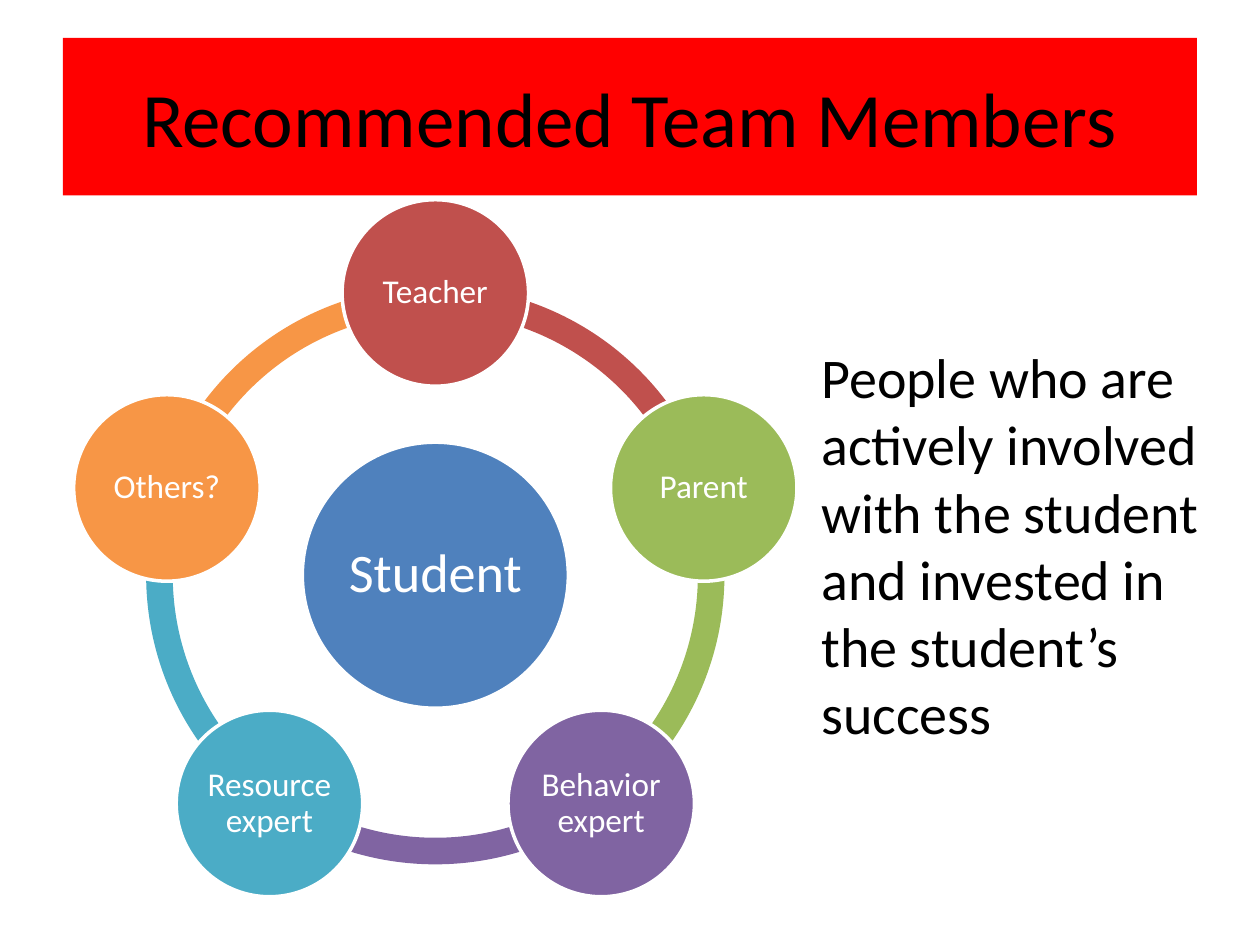
import math

import pptx
import pptx.util
import pptx.dml.color
import pptx.enum.shapes
import pptx.enum.text

# Slide grid: 100 columns by 75 rows of square cells
COLS, ROWS = 100, 75
CELL = pptx.util.Inches(0.1)
FONT = "Calibri"
COLORS = {
    "banner": "FF0000", "text": "000000", "white": "FFFFFF", "blue": "4F81BD",
    "red": "C0504D", "green": "9BBB59", "purple": "8064A2",
    "teal": "4BACC6", "orange": "F79646",
}
MEMBERS = [
    ("Teacher", "red"), ("Parent", "green"), ("Behavior expert", "purple"),
    ("Resource expert", "teal"), ("Others?", "orange"),
]
SHAPE = pptx.enum.shapes.MSO_SHAPE
ALIGN = pptx.enum.text.PP_ALIGN
ANCHOR = pptx.enum.text.MSO_ANCHOR


def rgb(name):
    return pptx.dml.color.RGBColor.from_string(COLORS[name])


def cells(*lengths):
    return [round(n * CELL) for n in lengths]


def add_text(s, text, size, color="white", align=ALIGN.CENTER,
             anchor=ANCHOR.MIDDLE, inset=None, spacing=None):
    tf = s.text_frame
    tf.word_wrap = True
    tf.vertical_anchor = anchor
    if inset is not None:
        tf.margin_left = tf.margin_right = pptx.util.Inches(inset)
        tf.margin_top = tf.margin_bottom = pptx.util.Inches(inset)
    p = tf.paragraphs[0]
    p.alignment = align
    p.line_spacing = spacing
    r = p.add_run()
    r.text = text
    r.font.name = FONT
    r.font.size = pptx.util.Pt(size)
    r.font.color.rgb = rgb(color)


def add_filled(slide, kind, box, fill, outlined=False):
    s = slide.shapes.add_shape(kind, *cells(*box))
    s.shadow.inherit = False
    s.fill.solid()
    s.fill.fore_color.rgb = rgb(fill)
    if outlined:
        s.line.color.rgb = rgb("white")
        s.line.width = pptx.util.Pt(2)
    else:
        s.line.fill.background()
    return s


def add_circle(slide, cx, cy, d, fill, text, size):
    s = add_filled(slide, SHAPE.OVAL, (cx - d / 2, cy - d / 2, d, d), fill, True)
    add_text(s, text, size, inset=0.02, spacing=0.9)


def add_title(slide, box):
    s = add_filled(slide, SHAPE.RECTANGLE, box, "banner")
    add_text(s, "Recommended Team Members", 44, color="text")


def add_cycle(slide, box):
    left, top, width, height = box
    cx, cy = left + width / 2, top + height / 2
    step = 360 / len(MEMBERS)
    angles = [270 + i * step for i in range(len(MEMBERS))]

    # Ring segments, each running clockwise from its member to the next
    for angle, (_, color) in reversed(list(zip(angles, MEMBERS))):
        s = add_filled(slide, SHAPE.BLOCK_ARC, box, color)
        s.adjustments[0] = angle % 360 * 0.6
        s.adjustments[1] = (angle + step) % 360 * 0.6
        s.adjustments[2] = 0.046

    # Hub and members
    add_circle(slide, cx, cy, width * 0.46, "blue", "Student", 31)
    orbit = width * 0.488
    for angle, (name, color) in zip(angles, MEMBERS):
        a = math.radians(angle)
        add_circle(slide, cx + orbit * math.cos(a), cy + orbit * math.sin(a),
                   14.8, color, name, 19)


def add_caption(slide, box):
    s = slide.shapes.add_textbox(*cells(*box))
    add_text(s, "People who are actively involved with the student "
             "and invested in the student’s success", 32,
             color="text", align=ALIGN.LEFT, anchor=ANCHOR.TOP)


def main():
    prs = pptx.Presentation()
    prs.slide_width, prs.slide_height = cells(COLS, ROWS)
    slide = prs.slides.add_slide(prs.slide_layouts[6])
    add_title(slide, (5, 3, 90, 12.5))
    add_cycle(slide, (11.6, 22.7, 45.9, 45.9))
    add_caption(slide, (64.2, 26.7, 35.8, 33.3))
    prs.save("out.pptx")


if __name__ == "__main__":
    main()
